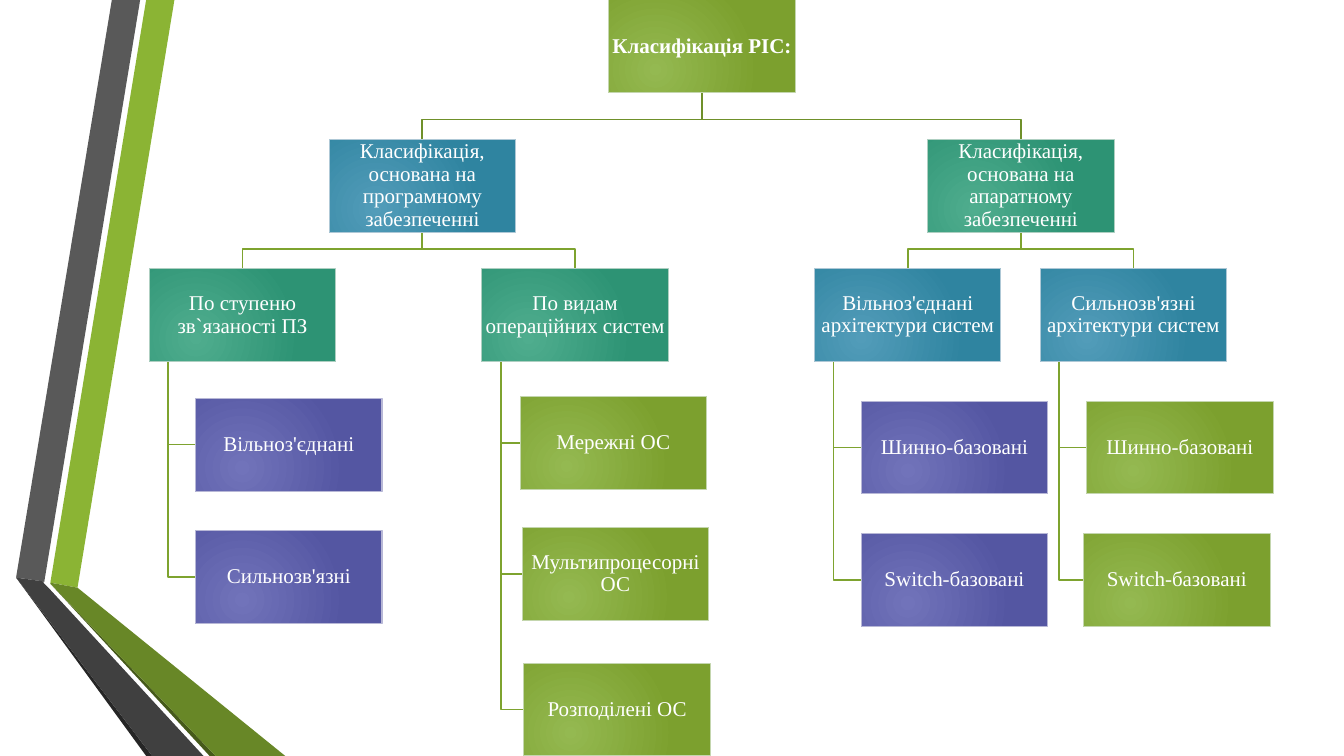
from dataclasses import dataclass
from lxml import etree
from pptx import Presentation
from pptx.dml.color import RGBColor
from pptx.enum.shapes import MSO_SHAPE
from pptx.enum.text import MSO_ANCHOR, PP_ALIGN
from pptx.oxml.ns import qn
from pptx.util import Pt


@dataclass(frozen=True)
class Theme:
    font: str = "Times New Roman"
    text_size: float = 15
    text: str = "FFFFFF"
    trunk: str = "6F902A"
    branch: str = "7EA32F"
    green: tuple = ("94B951", "7CA02E", "C4D6AE")
    blue: tuple = ("529CB9", "2F84A0", "AEC8D6")
    teal: tuple = ("4FAD8E", "2D9374", "AECFC1")
    violet: tuple = ("7173BA", "5456A2", "B7B7D6")
    ribbon_green: str = "8BB434"
    ribbon_gray: str = "595959"
    fold_black: str = "262626"
    fold_olive: str = "465A1A"
    tail_green: str = "688727"
    tail_gray: str = "404040"


theme = Theme()
BOX_WIDTH, BOX_HEIGHT = 133.2, 66.4
BEND_GAP = 14
STEM_INSET = 13.5

presentation = Presentation()
presentation.slide_width, presentation.slide_height = Pt(960), Pt(540)
slide = presentation.slides.add_slide(presentation.slide_layouts[6])


def add_outline(points, closed):
    corners = [(Pt(x), Pt(y)) for x, y in points]
    builder = slide.shapes.build_freeform(*corners[0])
    builder.add_line_segments(corners[1:], close=closed)
    shape = builder.convert_to_shape()
    shape.shadow.inherit = False
    return shape


ribbons = [
    (theme.ribbon_green, [(36, 416.2), (55.4, 419.8), (124.6, 0), (104.4, 0)]),
    (theme.ribbon_gray, [(100.1, 0), (79.9, 0), (11.5, 412.6), (31.7, 415.4)]),
    (theme.fold_black, [(11.5, 412.6), (104.4, 540), (108.7, 540)]),
    (theme.fold_olive, [(36, 416.9), (149.8, 540), (154.1, 540)]),
    (theme.tail_green, [(36, 416.2), (36, 416.9), (154.1, 540), (203.8, 540), (55.4, 419.8)]),
    (theme.tail_gray, [(145.4, 540), (34.6, 419.8), (31, 416.2), (31.7, 415.4),
                       (11.5, 412.6), (108.7, 540)]),
]
for color, points in ribbons:
    shape = add_outline(points, True)
    shape.fill.solid()
    shape.fill.fore_color.rgb = RGBColor.from_string(color)
    shape.line.fill.background()

# key: (parent, left, top, palette, text)
boxes = {
    "root": (None, 434.9, 0, theme.green, "Класифікація РІС:"),
    "software": ("root", 235.1, 99.5, theme.blue,
                 "Класифікація, основана на програмному забезпеченні"),
    "hardware": ("root", 662.6, 99.5, theme.teal,
                 "Класифікація, основана на апаратному забезпеченні"),
    "coupling": ("software", 106.6, 192, theme.teal, "По ступеню зв`язаності ПЗ"),
    "systems": ("software", 344.2, 192, theme.teal, "По видам операційних систем"),
    "loose": ("hardware", 581.8, 191.7, theme.blue, "Вільноз'єднані архітектури систем"),
    "tight": ("hardware", 743, 191.7, theme.blue, "Сильнозв'язні архітектури систем"),
    "coupling loose": ("coupling", 139.7, 284.4, theme.violet, "Вільноз'єднані"),
    "coupling tight": ("coupling", 139.7, 378.7, theme.violet, "Сильнозв'язні"),
    "network": ("systems", 371.5, 283.2, theme.green, "Мережні ОС"),
    "multiprocessor": ("systems", 373, 376.7, theme.green, "Мультипроцесорні ОС"),
    "distributed": ("systems", 374.2, 473.6, theme.green, "Розподілені ОС"),
    "loose bus": ("loose", 615.2, 286.5, theme.violet, "Шинно-базовані"),
    "loose switch": ("loose", 615.2, 381, theme.violet, "Switch-базовані"),
    "tight bus": ("tight", 776.2, 286.5, theme.green, "Шинно-базовані"),
    "tight switch": ("tight", 774, 381, theme.green, "Switch-базовані"),
}

for parent, left, top, palette, text in boxes.values():
    if parent is None:
        continue
    grandparent, parent_left, parent_top = boxes[parent][:3]
    start_y = parent_top + BOX_HEIGHT
    if parent == "root" or grandparent == "root":
        start_x = parent_left + BOX_WIDTH / 2
        end_x = left + BOX_WIDTH / 2
        bend_y = top - BEND_GAP
        points = [(start_x, start_y), (start_x, bend_y), (end_x, bend_y), (end_x, top)]
    else:
        stem_x = parent_left + STEM_INSET
        middle_y = top + BOX_HEIGHT / 2
        points = [(stem_x, start_y), (stem_x, middle_y), (left, middle_y)]
    shape = add_outline(points, False)
    shape.fill.background()
    shape.line.width = Pt(1.25)
    shape.line.color.rgb = RGBColor.from_string(
        theme.trunk if parent == "root" else theme.branch)

for parent, left, top, (light, dark, border), text in boxes.values():
    shape = slide.shapes.add_shape(
        MSO_SHAPE.RECTANGLE, Pt(left), Pt(top), Pt(BOX_WIDTH), Pt(BOX_HEIGHT))
    shape.shadow.inherit = False
    shape.line.width = Pt(0.75)
    shape.line.color.rgb = RGBColor.from_string(border)
    shape.fill.gradient()
    for stop, color in zip(shape.fill.gradient_stops, (light, dark)):
        stop.color.rgb = RGBColor.from_string(color)
    gradient = shape._element.spPr.find(qn("a:gradFill"))
    gradient.remove(gradient.find(qn("a:lin")))
    circle = etree.SubElement(gradient, qn("a:path"), {"path": "circle"})
    etree.SubElement(circle, qn("a:fillToRect"),
                     {"l": "50000", "t": "100000", "r": "100000", "b": "50000"})

    frame = shape.text_frame
    frame.word_wrap = True
    frame.vertical_anchor = MSO_ANCHOR.MIDDLE
    frame.margin_left = frame.margin_right = Pt(0.75)
    frame.margin_top = frame.margin_bottom = Pt(0.75)
    frame.text = text
    paragraph = frame.paragraphs[0]
    paragraph.alignment = PP_ALIGN.CENTER
    paragraph.line_spacing = 0.9
    font = paragraph.runs[0].font
    font.name = theme.font
    font.size = Pt(theme.text_size)
    font.bold = parent is None
    font.color.rgb = RGBColor.from_string(theme.text)

presentation.save("out.pptx")
